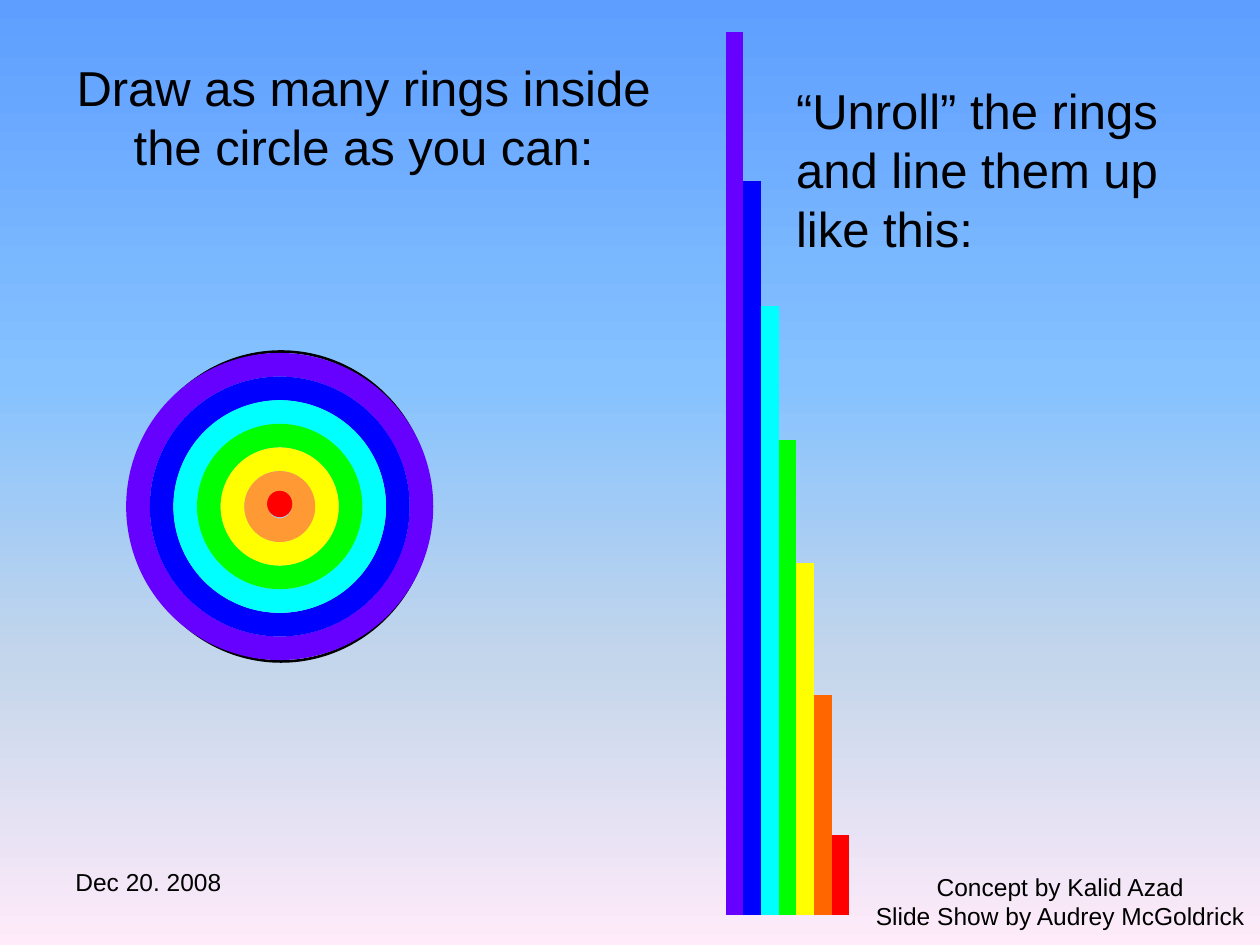
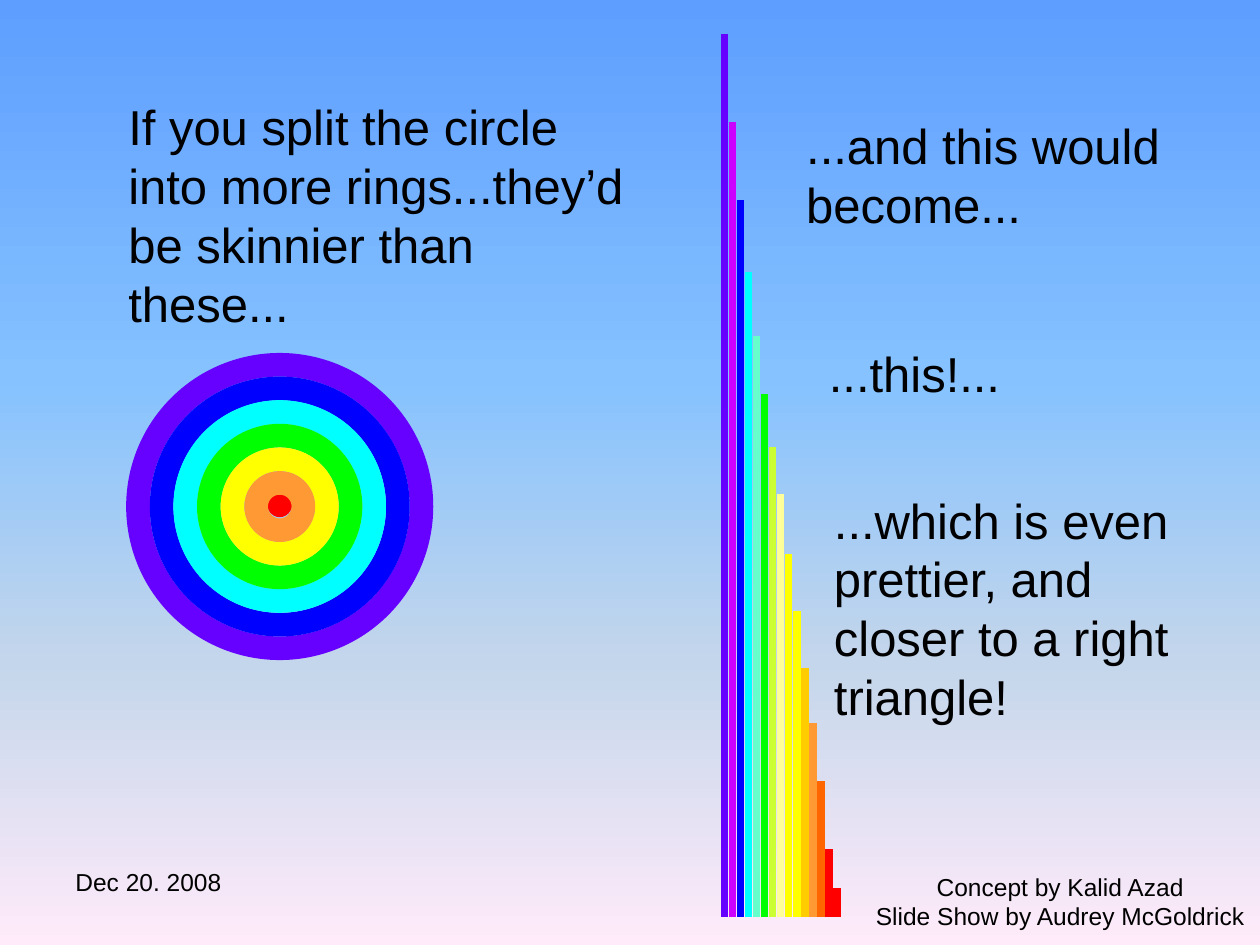
"""Build two slides that unroll the rings of a circle into a triangle of bars."""
from copy import deepcopy

from lxml import etree
from pptx import Presentation
from pptx.dml.color import RGBColor
from pptx.enum.shapes import MSO_CONNECTOR, MSO_SHAPE
from pptx.enum.text import MSO_ANCHOR, MSO_AUTO_SIZE, PP_ALIGN
from pptx.oxml.ns import qn
from pptx.util import Inches, Pt

STRAIGHT, OVAL = MSO_CONNECTOR.STRAIGHT, MSO_SHAPE.OVAL
MIDDLE = MSO_ANCHOR.MIDDLE
GROW = MSO_AUTO_SIZE.SHAPE_TO_FIT_TEXT
LEFT, CENTER = PP_ALIGN.LEFT, PP_ALIGN.CENTER
TITLE_ONLY, BLANK = 5, 6

COLORS = {
    "black": "000000", "violet": "6600FF", "purple": "CC00FF", "blue": "0000FF",
    "cyan": "00FFFF", "mint": "66FFCC", "green": "00FF00", "lime": "CCFF33",
    "cream": "FFFF99", "yellow": "FFFF00", "gold": "FFCC00", "orange": "FF9933",
    "deep orange": "FF6600", "red": "FF0000",
    "sky top": "5E9EFF", "sky": "85C2FF", "haze": "C4D6EB", "blush": "FFEBFA",
}
SKY = [(0, "sky top"), (0.4, "sky"), (0.7, "haze"), (1, "blush")]
FONT, BODY_SIZE, FOOTER_SIZE = "Arial", 28, 14

FOOTERS = [
    (["Dec 20. 2008"], (0.5, 6.83, 1.5, 0.52), LEFT),
    (["Concept by Kalid Azad", "Slide Show by Audrey McGoldrick"],
     (6.83, 6.87, 3.17, 0.52), CENTER),
]

RING_COLORS = ["violet", "blue", "cyan", "green", "yellow", "orange"]
RING_CENTER, OUTER_RING, RING_WEIGHT = (2.22, 4.02), 2.25, 13.5
CIRCLE_CENTER, CIRCLE_SIZE = (2.23, 4.02), (2.38, 2.46)
DOT_CENTER, DOT_SIZE = (2.22, 4), (0.2, 0.21)

SLIDES = [
    {
        "title": "Draw as many rings inside the circle as you can:",
        "title_box": (0.5, 0.3, 4.77, 1.25),
        "notes": [("“Unroll” the rings and line them up like this:",
                   (6.22, 0.59, 3.44, 1.5))],
        "outlined": True,
        "bars": {
            "first": 5.83, "last": 6.67, "bottom": 7.26, "weight": 10,
            "tops": [("violet", 0.25), ("blue", 1.44), ("cyan", 2.43),
                     ("green", 3.49), ("yellow", 4.47),
                     ("deep orange", 5.52), ("red", 6.63)],
        },
    },
    {
        "title": None,
        "notes": [
            ("If you split the circle into more rings...they’d be skinnier than these...",
             (0.92, 0.72, 4.19, 1.97)),
            ("...and this would become...", (6.3, 0.87, 3.19, 1.03)),
            ("...this!...", (6.48, 2.68, 3.19, 0.57)),
            ("...which is even prettier, and closer to a right triangle!",
             (6.52, 3.84, 3.19, 1.97)),
        ],
        "outlined": False,
        "bars": {
            "first": 5.75, "last": 6.64, "bottom": 7.28, "weight": 4.5,
            "tops": [("violet", 0.27), ("purple", 0.97), ("blue", 1.59),
                     ("cyan", 2.16), ("mint", 2.67), ("green", 3.13),
                     ("lime", 3.55), ("cream", 3.92), ("yellow", 4.4),
                     ("yellow", 4.85), ("gold", 5.3), ("orange", 5.74),
                     ("deep orange", 6.2), ("red", 6.74), ("red", 7.05)],
        },
    },
]


def rgb(color):
    return RGBColor.from_string(COLORS[color])


def inches(lengths):
    return [Inches(length) for length in lengths]


def paint_sky(master):
    fill = master.background.fill
    fill.gradient()
    fill.gradient_angle = 270
    stops = master.element.find(".//" + qn("a:gsLst"))
    while len(stops) < len(SKY):
        stops.append(deepcopy(stops[0]))
    for stop, (position, color) in zip(fill.gradient_stops, SKY):
        stop.position = position
        stop.color.rgb = rgb(color)


def write(frame, lines, size, align):
    frame.word_wrap = True
    frame.text = "\n".join(lines)
    for paragraph in frame.paragraphs:
        paragraph.alignment = align
        paragraph.font.name = FONT
        paragraph.font.size = Pt(size)
        paragraph.font.color.rgb = rgb("black")


def add_title(slide, text, box):
    title = slide.shapes.title
    title.left, title.top, title.width, title.height = inches(box)
    write(title.text_frame, [text], BODY_SIZE, CENTER)
    title.text_frame.vertical_anchor = MIDDLE


def add_text(slide, lines, box, size, align=LEFT):
    frame = slide.shapes.add_textbox(*inches(box)).text_frame
    write(frame, lines, size, align)
    return frame


def add_ellipse(slide, center, size, color, weight=None):
    corner = [middle - length / 2 for middle, length in zip(center, size)]
    ellipse = slide.shapes.add_shape(OVAL, *inches([*corner, *size]))
    ellipse.shadow.inherit = False
    if weight:
        ellipse.fill.background()
        ellipse.line.color.rgb = rgb(color)
        ellipse.line.width = Pt(weight)
    else:
        ellipse.fill.solid()
        ellipse.fill.fore_color.rgb = rgb(color)
        ellipse.line.fill.background()


def add_target(slide, outlined):
    if outlined:
        add_ellipse(slide, CIRCLE_CENTER, CIRCLE_SIZE, "black", 1.5)
    else:
        add_ellipse(slide, DOT_CENTER, DOT_SIZE, "red")
    count = len(RING_COLORS)
    for index, color in enumerate(RING_COLORS):
        diameter = OUTER_RING * (count - index) / count
        add_ellipse(slide, RING_CENTER, (diameter, diameter), color, RING_WEIGHT)
    if outlined:
        add_ellipse(slide, DOT_CENTER, DOT_SIZE, "red")


def add_bars(slide, first, last, bottom, weight, tops):
    step = (last - first) / (len(tops) - 1)
    for index, (color, top) in enumerate(tops):
        x = first + index * step
        bar = slide.shapes.add_connector(STRAIGHT, *inches([x, top, x, bottom]))
        bar.line.color.rgb = rgb(color)
        bar.line.width = Pt(weight)
        etree.SubElement(bar._element.spPr, qn("a:effectLst"))


def main():
    prs = Presentation()
    prs.slide_width, prs.slide_height = Inches(10), Inches(7.5)
    paint_sky(prs.slide_master)
    for content in SLIDES:
        layout = TITLE_ONLY if content["title"] else BLANK
        slide = prs.slides.add_slide(prs.slide_layouts[layout])
        for lines, box, align in FOOTERS:
            add_text(slide, lines, box, FOOTER_SIZE, align)
        if content["title"]:
            add_title(slide, content["title"], content["title_box"])
        add_target(slide, content["outlined"])
        add_bars(slide, **content["bars"])
        for note, box in content["notes"]:
            add_text(slide, [note], box, BODY_SIZE).auto_size = GROW
    prs.save("out.pptx")


if __name__ == "__main__":
    main()
